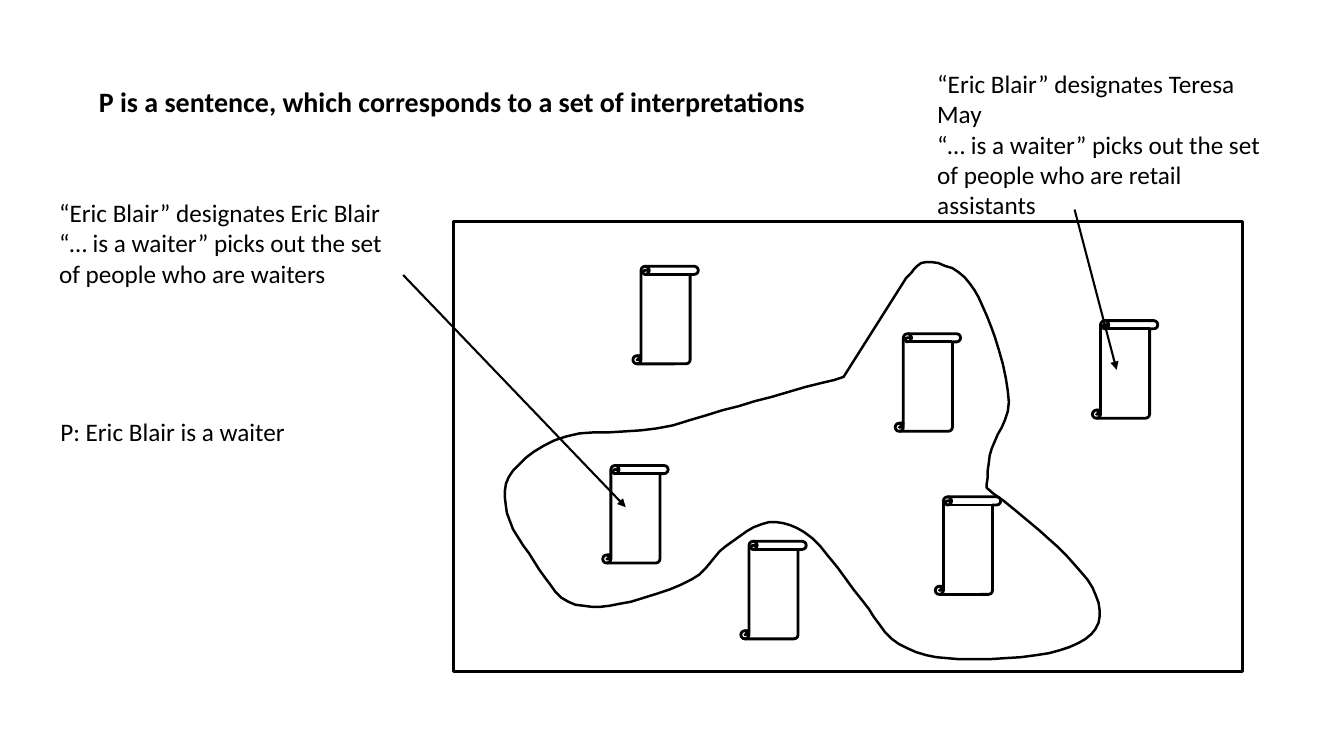
from pptx import Presentation
from pptx.dml.color import RGBColor
from pptx.enum.shapes import MSO_CONNECTOR, MSO_SHAPE
from pptx.enum.text import MSO_AUTO_SIZE
from pptx.oxml.ns import qn
from pptx.util import Cm, Pt
from lxml import etree

STRAIGHT = MSO_CONNECTOR.STRAIGHT
RECTANGLE = MSO_SHAPE.RECTANGLE
SCROLL = MSO_SHAPE.VERTICAL_SCROLL
GROW = MSO_AUTO_SIZE.SHAPE_TO_FIT_TEXT


class Theme:
    font = "Calibri"
    ink = RGBColor(0, 0, 0)
    heading = Pt(20)
    body = Pt(18)
    frame_line = Pt(2)
    region_line = Pt(1.75)
    arrow_line = Pt(1.5)


def smooth(knots, steps=6):
    """Points of a Catmull-Rom curve through the knots."""
    padded = [knots[0], *knots, knots[-1]]
    curve = []
    for quad in zip(padded, padded[1:], padded[2:], padded[3:]):
        for step in range(steps):
            t = step / steps
            curve.append(tuple(
                b + t * (c - a) / 2
                + t ** 2 * (2 * a - 5 * b + 4 * c - d) / 2
                + t ** 3 * (3 * b - a - 3 * c + d) / 2
                for a, b, c, d in zip(*quad)))
    return curve + [knots[-1]]


class Page:
    def __init__(self, deck, theme):
        self.theme = theme
        self.shapes = deck.slides.add_slide(deck.slide_layouts[6]).shapes

    def text(self, left, top, width, height, lines, size, bold=False):
        box = self.shapes.add_textbox(Cm(left), Cm(top), Cm(width), Cm(height))
        frame = box.text_frame
        frame.word_wrap = True
        frame.auto_size = GROW
        style = {"name": self.theme.font, "size": size, "bold": bold}
        for number, line in enumerate(lines):
            para = frame.paragraphs[0] if number == 0 else frame.add_paragraph()
            span = para.add_run()
            span.text = line
            for key, value in style.items():
                setattr(span.font, key, value)
            span.font.color.rgb = self.theme.ink

    def outline(self, shape, width):
        shape.shadow.inherit = False
        shape.fill.background()
        shape.line.color.rgb = self.theme.ink
        shape.line.width = width

    def shape(self, kind, left, top, width, height):
        shape = self.shapes.add_shape(kind, Cm(left), Cm(top), Cm(width), Cm(height))
        self.outline(shape, self.theme.frame_line)

    def region(self, arcs, unit):
        points = [point for arc in arcs for point in smooth(arc)]
        builder = self.shapes.build_freeform(*points[0], scale=unit)
        builder.add_line_segments(points[1:], close=True)
        self.outline(builder.convert_to_shape(), self.theme.region_line)

    def arrow(self, *ends):
        arrow = self.shapes.add_connector(STRAIGHT, *[Cm(end) for end in ends])
        arrow.line.color.rgb = self.theme.ink
        arrow.line.width = self.theme.arrow_line
        etree.SubElement(arrow.line._get_or_add_ln(), qn("a:tailEnd"), type="triangle")
        etree.SubElement(arrow._element.spPr, qn("a:effectLst"))


# Boundary of the set: two smooth arcs on a fine grid, closed by a straight edge
GRID = Cm(0.0254)
LOWER_ARC = [
    (837, 374), (749, 398), (652, 425), (562, 433), (509, 467), (503, 509),
    (530, 557), (564, 597), (615, 599), (686, 575), (720, 542), (763, 518),
    (806, 534), (855, 595), (892, 639), (952, 654), (1041, 648), (1087, 624),
    (1084, 583), (1041, 535), (979, 484),
]
UPPER_ARC = [
    (979, 484), (984, 445), (1001, 399), (983, 323), (957, 275), (919, 260),
    (899, 276),
]
SCROLL_SPOTS = [
    (15.95, 6.71), (23.57, 12.52), (27.53, 8.08),
    (15.19, 11.73), (18.67, 13.64), (22.56, 8.41),
]


def main():
    deck = Presentation()
    deck.slide_width, deck.slide_height = Cm(33.87), Cm(19.05)
    theme = Theme()
    page = Page(deck, theme)

    # Heading
    page.text(2.24, 2.01, 29.26, 1.12,
              ["P is a sentence, which corresponds to a set of interpretations"],
              theme.heading, bold=True)

    # Space of interpretations, with the set that P corresponds to
    page.shape(RECTANGLE, 11.43, 5.59, 19.89, 11.33)
    page.region([LOWER_ARC, UPPER_ARC], GRID)
    for left, top in SCROLL_SPOTS:
        page.shape(SCROLL, left, top, 1.65, 2.46)

    # Interpretation inside the set
    page.text(1.24, 4.85, 8.94, 2.57,
              ["“Eric Blair” designates Eric Blair",
               "“… is a waiter” picks out the set of people who are waiters"],
              theme.body)
    page.arrow(10.16, 6.93, 15.77, 12.78)

    # Interpretation outside the set
    page.text(23.37, 1.6, 8.94, 4.11,
              ["“Eric Blair” designates Teresa May",
               "“… is a waiter” picks out the set of people who are retail assistants"],
              theme.body)
    page.arrow(27.08, 5.28, 28.14, 9.32)

    # The sentence itself
    page.text(1.27, 10.36, 8.89, 1.02, ["P: Eric Blair is a waiter"], theme.body)

    deck.save("out.pptx")


if __name__ == "__main__":
    main()
